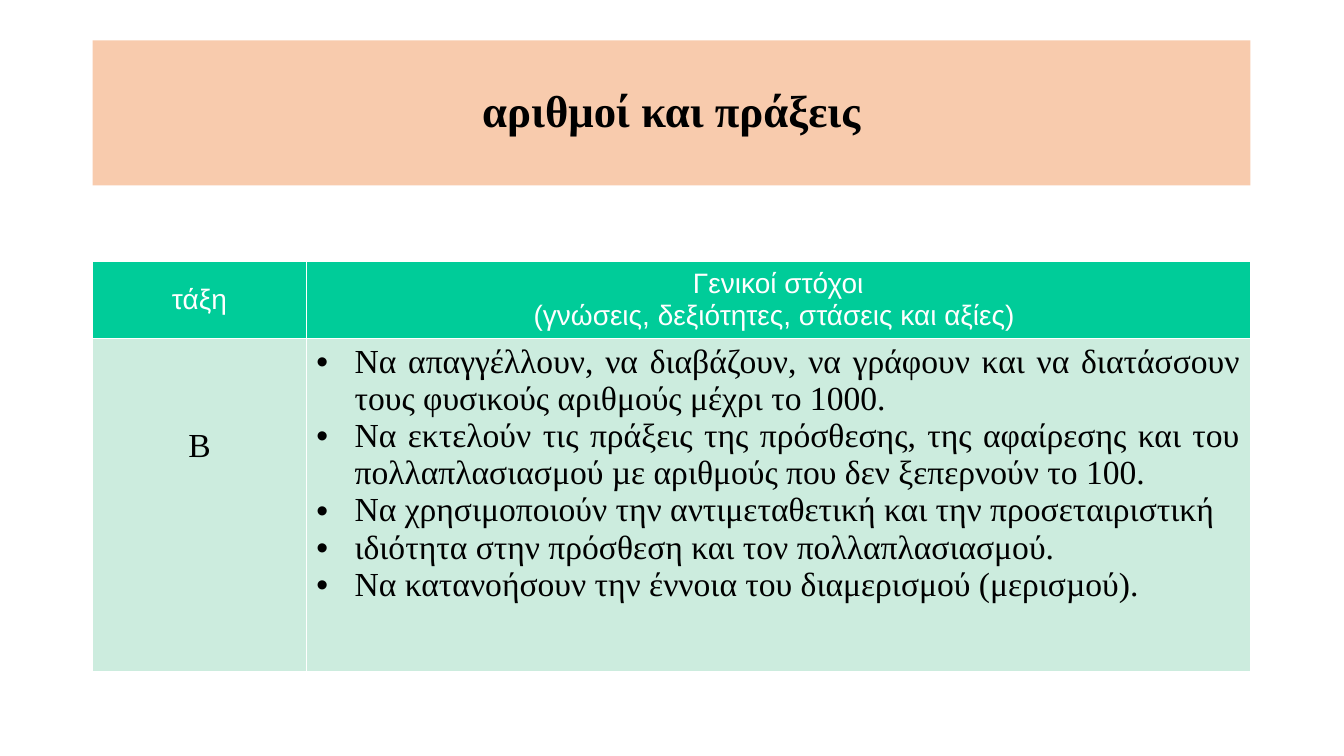
from dataclasses import dataclass

from lxml.etree import SubElement
from pptx import Presentation
from pptx.dml.color import RGBColor
from pptx.enum.text import MSO_ANCHOR, PP_ALIGN
from pptx.oxml.ns import qn
from pptx.util import Inches, Pt

SERIF = "Times New Roman"
LEFT, WIDTH = 0.92, 11.49
INDENT = 0.38


@dataclass
class CellText:
    lines: list[str]
    size: int
    font: str
    color: str
    fill: str
    align: PP_ALIGN = PP_ALIGN.CENTER
    anchor: MSO_ANCHOR = MSO_ANCHOR.TOP
    margin_top: float = 0.05
    bulleted: bool = False


def rgb(value: str) -> RGBColor:
    return RGBColor.from_string(value)


def format_runs(para, size: int, font: str, color: str, bold: bool = False) -> None:
    for span in para.runs:
        span.font.size = Pt(size)
        span.font.name = font
        span.font.bold = bold
        span.font.color.rgb = rgb(color)


def add_bullet(para) -> None:
    properties = para._p.get_or_add_pPr()
    properties.set("marL", str(Inches(INDENT)))
    properties.set("indent", str(-Inches(INDENT)))
    SubElement(properties, qn("a:buFont"), typeface="Arial")
    SubElement(properties, qn("a:buChar"), char="•")


def add_borders(cell, color: str, width: float) -> None:
    properties = cell._tc.get_or_add_tcPr()
    for index, side in enumerate(("a:lnL", "a:lnR", "a:lnT", "a:lnB")):
        line = properties.makeelement(qn(side), {"w": str(Pt(width))})
        fill = SubElement(line, qn("a:solidFill"))
        SubElement(fill, qn("a:srgbClr"), val=color)
        properties.insert(index, line)


def fill_cell(cell, content: CellText) -> None:
    cell.fill.solid()
    cell.fill.fore_color.rgb = rgb(content.fill)
    cell.vertical_anchor = content.anchor
    cell.margin_top = Inches(content.margin_top)
    cell.text_frame.text = "\n".join(content.lines)
    for para in cell.text_frame.paragraphs:
        para.alignment = content.align
        format_runs(para, content.size, content.font, content.color)
        if content.bulleted:
            add_bullet(para)
    add_borders(cell, "FFFFFF", 1)


def header(text: str) -> CellText:
    return CellText([text], 20, "Arial", "FFFFFF", "00CC99", anchor=MSO_ANCHOR.MIDDLE)


def body(lines: list[str], **options) -> CellText:
    return CellText(lines, 24, SERIF, "000000", "CCECDE", **options)


GOALS = [
    "Να απαγγέλλουν, να διαβάζουν, να γράφουν και να διατάσσουν τους φυσικούς αριθμούς μέχρι το 1000. ",
    "Να εκτελούν τις πράξεις της πρόσθεσης, της αφαίρεσης και του πολλαπλασιασμού µε αριθμούς που δεν ξεπερνούν το 100. ",
    "Να χρησιμοποιούν την αντιμεταθετική και την προσεταιριστική",
    "ιδιότητα στην πρόσθεση και τον πολλαπλασιασμού.",
    "Να κατανοήσουν την έννοια του διαμερισμού (μερισµού). ",
]
ROWS = [
    [header("τάξη"), header("Γενικοί στόχοι\v(γνώσεις, δεξιότητες, στάσεις και αξίες) ")],
    [body(["Β"], margin_top=0.88), body(GOALS, align=PP_ALIGN.JUSTIFY, bulleted=True)],
]
COLUMN_WIDTHS = (2.12, 9.37)
ROW_HEIGHTS = (0.72, 3.31)


def add_title(page, text: str) -> None:
    box = page.shapes.add_textbox(Inches(LEFT), Inches(0.4), Inches(WIDTH), Inches(1.44))
    box.fill.solid()
    box.fill.fore_color.rgb = rgb("F8CBAD")
    frame = box.text_frame
    frame.word_wrap = True
    frame.vertical_anchor = MSO_ANCHOR.MIDDLE
    frame.text = text
    para = frame.paragraphs[0]
    para.alignment = PP_ALIGN.CENTER
    para.line_spacing = 0.9
    format_runs(para, 32, SERIF, "000000", bold=True)


def add_goals_table(page) -> None:
    table = page.shapes.add_table(
        len(ROW_HEIGHTS), len(COLUMN_WIDTHS),
        Inches(LEFT), Inches(2.59), Inches(WIDTH), Inches(sum(ROW_HEIGHTS)),
    ).table
    for column, width in zip(table.columns, COLUMN_WIDTHS):
        column.width = Inches(width)
    for row, height, contents in zip(table.rows, ROW_HEIGHTS, ROWS):
        row.height = Inches(height)
        for cell, content in zip(row.cells, contents):
            fill_cell(cell, content)


def main() -> None:
    deck = Presentation()
    deck.slide_width, deck.slide_height = Inches(13.34), Inches(7.5)
    page = deck.slides.add_slide(deck.slide_layouts[6])
    add_title(page, "αριθμοί και πράξεις")
    add_goals_table(page)
    deck.save("out.pptx")


if __name__ == "__main__":
    main()
